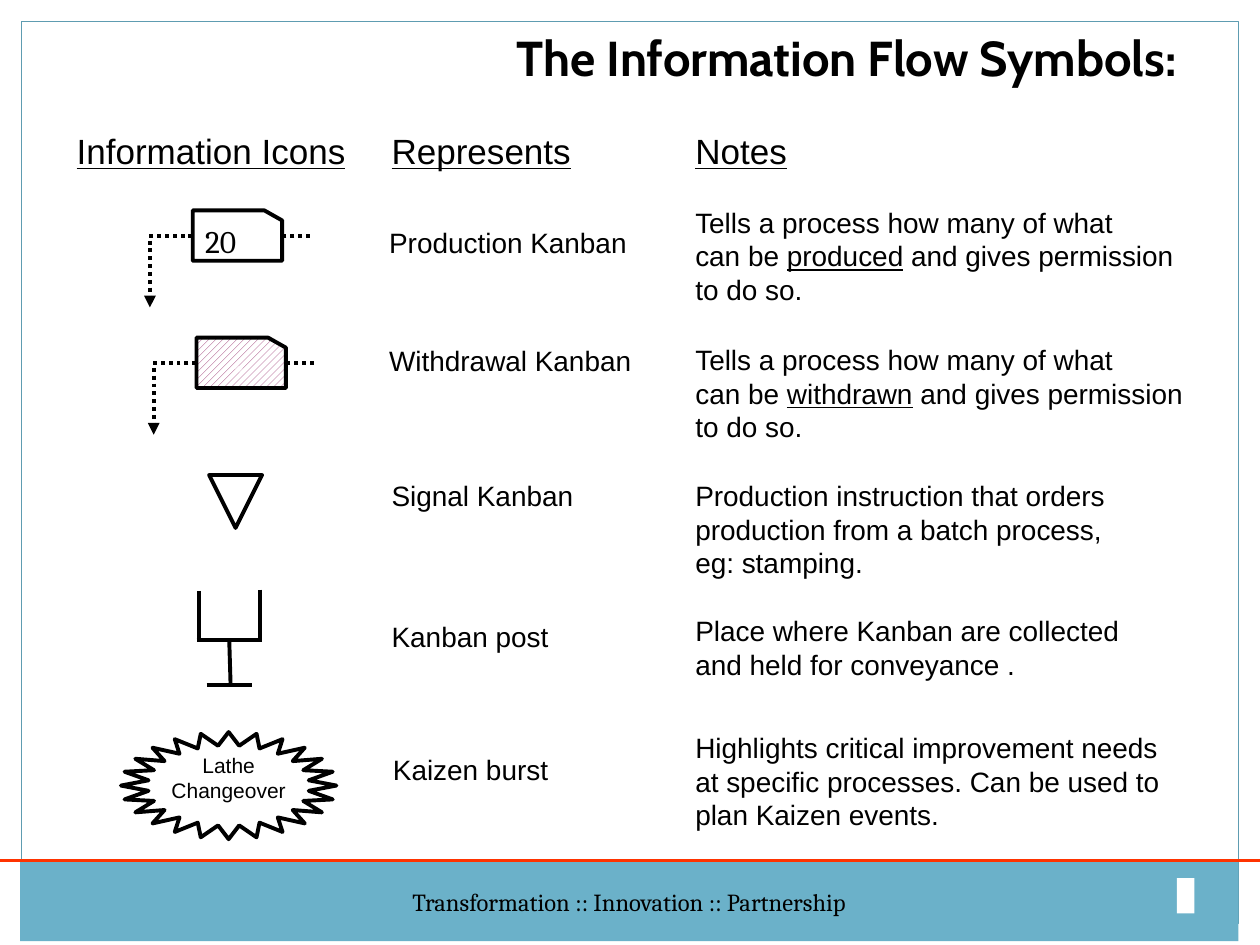
from dataclasses import dataclass

from pptx import Presentation
from pptx.dml.color import RGBColor
from pptx.enum.dml import MSO_LINE as Dash, MSO_PATTERN as Pattern
from pptx.enum.shapes import MSO_CONNECTOR as Link, MSO_SHAPE as Kind
from pptx.enum.text import MSO_ANCHOR as Anchor, MSO_AUTO_SIZE as Fit, PP_ALIGN as Align
from pptx.oxml.ns import qn
from pptx.util import Inches, Pt
from lxml.etree import SubElement

BLACK = RGBColor(0, 0, 0)
WHITE = RGBColor(255, 255, 255)
BLUE = RGBColor(0x6B, 0xB1, 0xC9)
FRAME = RGBColor(0x5E, 0x9C, 0xB1)
RED = RGBColor(0xFF, 0x33, 0x00)
PLUM = RGBColor(0x93, 0x29, 0x68)
PEN = 2.25
NOTE_X = 5.42


@dataclass
class Label:
    box: tuple
    lines: list  # words between underscores are underlined
    size: int = 16
    align: Align = Align.LEFT


@dataclass
class Stroke:
    start: tuple
    end: tuple
    dotted: bool = False
    arrow: bool = False
    color: RGBColor = BLACK
    width: float = PEN


def write(frame, lines, size, font="Arial", align=Align.LEFT, bold=None):
    """Fill a text frame, one paragraph a line."""
    for i, line in enumerate(lines):
        para = frame.paragraphs[0] if i == 0 else frame.add_paragraph()
        para.alignment = align
        para.space_before = Pt(0)
        for j, part in enumerate(line.split("_")):
            if not part:
                continue
            run = para.add_run()
            run.text = part
            run.font.size = Pt(size)
            run.font.name = font
            run.font.bold = bold
            run.font.color.rgb = BLACK
            if j % 2:
                run.font.underline = True


def add_label(shapes, label: Label):
    box = shapes.add_textbox(*map(Inches, label.box))
    box.text_frame.word_wrap = False
    box.text_frame.auto_size = Fit.SHAPE_TO_FIT_TEXT
    write(box.text_frame, label.lines, label.size, align=label.align)


def add_form(shapes, kind, box, fill=WHITE, line=BLACK, width=PEN, flip=None):
    form = shapes.add_shape(kind, *map(Inches, box))
    form.shadow.inherit = False
    if fill is None:
        form.fill.background()
    else:
        form.fill.solid()
        form.fill.fore_color.rgb = fill
    if line is None:
        form.line.fill.background()
    else:
        form.line.color.rgb = line
        form.line.width = Pt(width)
    if flip:
        form._element.spPr.find(qn("a:xfrm")).set(flip, "1")
    return form


def add_stroke(shapes, stroke: Stroke):
    ends = map(Inches, stroke.start + stroke.end)
    link = shapes.add_connector(Link.STRAIGHT, *ends)
    link.line.color.rgb = stroke.color
    link.line.width = Pt(stroke.width)
    if stroke.dotted:
        link.line.dash_style = Dash.ROUND_DOT
    if stroke.arrow:
        SubElement(link.line._get_or_add_ln(), qn("a:tailEnd"), type="triangle")
    SubElement(link._element.spPr, qn("a:effectLst"))


def add_card(shapes, x, y):
    """Kanban card with its dotted flow line and arrow."""
    add_stroke(shapes, Stroke((x + 0.93, y + 0.2), (x - 0.36, y + 0.2), True))
    add_stroke(shapes, Stroke((x - 0.34, y + 0.24), (x - 0.34, y + 0.77), True, True))
    return add_form(shapes, Kind.FLOWCHART_CARD, (x, y, 0.71, 0.4), flip="flipH")


HEADS = [
    Label((0.51, 0.98, 2.35, 0.44), ["_Information Icons_"], 20),
    Label((3.01, 0.98, 1.64, 0.44), ["_Represents_"], 20),
    Label((NOTE_X, 0.98, 0.93, 0.44), ["_Notes_"], 20),
]
NAMES = [
    Label((2.99, 1.74, 2.09, 0.37), ["Production Kanban"]),
    Label((2.99, 2.68, 2.12, 0.37), ["Withdrawal Kanban"]),
    Label((3.01, 3.75, 1.64, 0.37), ["Signal Kanban"]),
    Label((3.01, 4.87, 1.45, 0.37), ["Kanban post"]),
    Label((3.02, 5.92, 1.45, 0.37), ["Kaizen burst"]),
]
NOTES = [
    Label((NOTE_X, top, wide, 0.9),
          ["Tells a process how many of what",
           f"can be _{verb}_ and gives permission", "to do so."])
    for top, wide, verb in [(1.58, 4, "produced"), (2.67, 4.08, "withdrawn")]
] + [
    Label((NOTE_X, 3.75, 3.46, 0.9),
          ["Production instruction that orders",
           "production from a batch process,", "eg: stamping."]),
    Label((NOTE_X, 4.82, 3.57, 0.64),
          ["Place where Kanban are collected", "and held for conveyance ."]),
    Label((NOTE_X, 5.75, 3.9, 0.9),
          ["Highlights critical improvement needs",
           "at specific processes. Can be used to", "plan Kaizen events."]),
]
POST = [
    Stroke((1.58, 4.69), (1.58, 5.09)),
    Stroke((2.06, 4.68), (2.06, 5.09)),
    Stroke((1.56, 5.08), (2.08, 5.08)),
    Stroke((1.82, 5.09), (1.83, 5.43)),
    Stroke((1.64, 5.44), (2, 5.44)),
]


def main():
    deck = Presentation()
    deck.slide_width, deck.slide_height = Inches(10), Inches(7.5)
    slide = deck.slides.add_slide(deck.slide_layouts[5])
    shapes = slide.shapes

    # Title
    title = shapes.title
    title.left, title.top = Inches(4), Inches(0.17)
    title.width, title.height = Inches(6.25), Inches(0.57)
    title.text_frame.vertical_anchor = Anchor.TOP
    title.text_frame.word_wrap = True
    write(title.text_frame, ["The Information Flow Symbols:"], 28, "Cabin", bold=True)

    # Frame and footer
    add_form(shapes, Kind.RECTANGLE, (0.17, 0.17, 9.66, 7.16), None, FRAME, 0.75)
    bar = add_form(shapes, Kind.RECTANGLE, (0.16, 6.84, 9.67, 0.63), BLUE, None)
    bar.text_frame.word_wrap = False
    write(bar.text_frame, ["Transformation :: Innovation :: Partnership"], 14,
          "Cambria", Align.CENTER)
    add_form(shapes, Kind.RECTANGLE, (9.34, 6.97, 0.14, 0.28), WHITE, None)
    add_stroke(shapes, Stroke((0, 6.83), (10, 6.83), color=RED, width=2))

    # Icons
    card = add_card(shapes, 1.53, 1.67)
    card.text_frame.word_wrap = False
    write(card.text_frame, ["20"], 18, "Cambria")
    hatch = add_card(shapes, 1.56, 2.68).fill
    hatch.patterned()
    hatch.pattern = Pattern.WIDE_UPWARD_DIAGONAL
    hatch.fore_color.rgb, hatch.back_color.rgb = PLUM, WHITE
    add_form(shapes, Kind.ISOSCELES_TRIANGLE, (1.66, 3.77, 0.42, 0.42), flip="flipV")
    for stroke in POST:
        add_stroke(shapes, stroke)
    burst = add_form(shapes, Kind.STAR_24_POINT, (0.96, 5.81, 1.71, 0.85))
    burst.adjustments[0] = 0.375
    add_label(shapes, Label((1.26, 5.92, 1.11, 0.62), ["Lathe", "Changeover"],
                            12, Align.CENTER))

    # Headings, names and notes
    for label in HEADS + NAMES + NOTES:
        add_label(shapes, label)

    deck.save("out.pptx")


if __name__ == "__main__":
    main()
